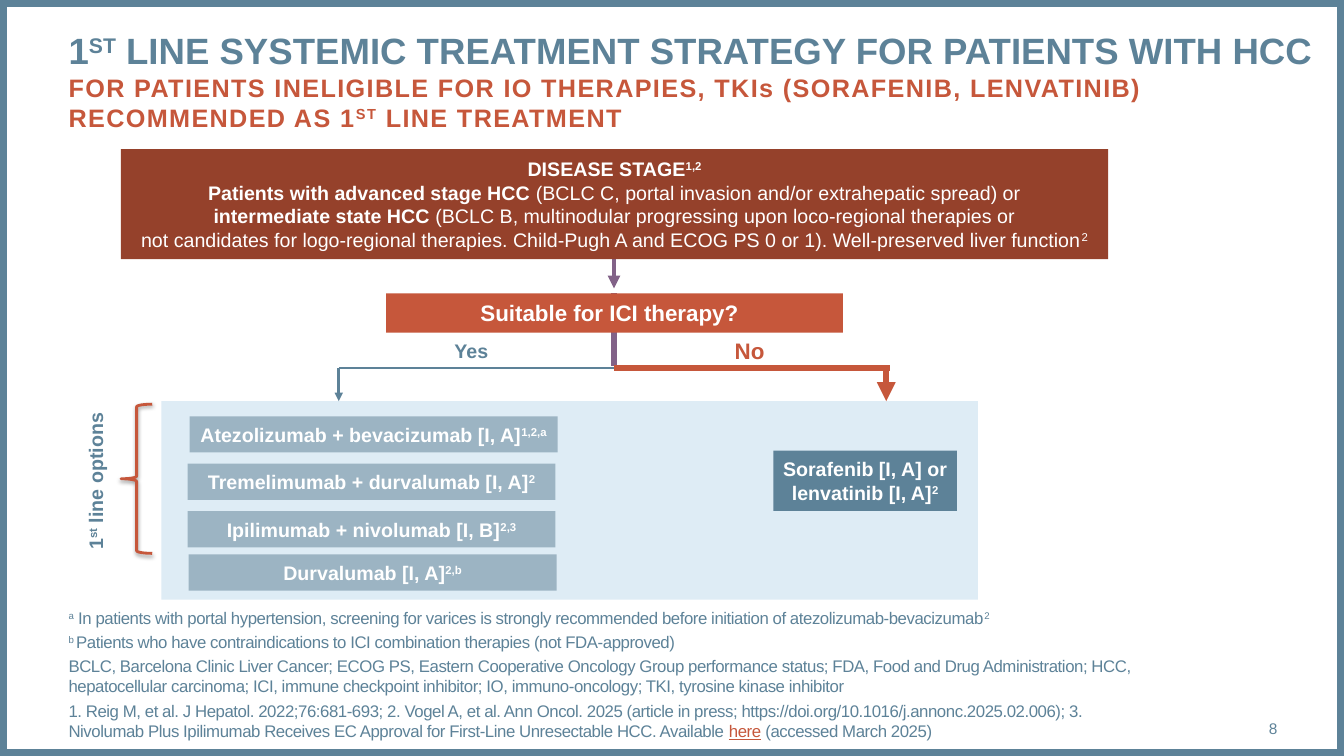
from dataclasses import dataclass

from lxml import etree
from pptx import Presentation
from pptx import util as u
from pptx.dml.color import RGBColor
from pptx.enum import shapes, text
from pptx.oxml.ns import qn

PX = 9144  # EMU per px, 100 px to the inch


@dataclass(frozen=True)
class Theme:
    font: str = "Arial"
    slate: str = "5D8298"
    mist: str = "9CB4C3"
    pale: str = "DEECF5"
    rust: str = "C6573B"
    brick: str = "95412B"
    plum: str = "826288"
    white: str = "FFFFFF"
    title: float = 26.1
    subtitle: float = 18
    question: float = 16
    label: float = 14
    note: float = 12
    number: float = 11


T = Theme()
CENTER, LEFT, RIGHT = text.PP_ALIGN.CENTER, text.PP_ALIGN.LEFT, text.PP_ALIGN.RIGHT


def write(paragraph, words, size, color, bold=True, spacing=0, underline=False):
    """Add runs; words between ^ marks are superscript."""
    for i, part in enumerate(words.split("^")):
        if not part:
            continue
        run = paragraph.add_run()
        run.text = part
        font = run.font
        font.name, font.size, font.bold = T.font, u.Pt(size), bold
        font.color.rgb = RGBColor.from_string(color)
        if underline:
            font.underline = True
        props = run._r.get_or_add_rPr()
        if spacing:
            props.set("spc", str(spacing))
        if i % 2:
            props.set("baseline", "30000")


def box(place, fill=None, sides=0, ends=5, anchor=text.MSO_ANCHOR.MIDDLE, align=CENTER):
    """Add a filled rectangle or a text box; return it with its first paragraph."""
    place = [n * PX for n in place]
    if fill:
        item = slide.shapes.add_shape(shapes.MSO_SHAPE.RECTANGLE, *place)
        item.shadow.inherit = False
        item.fill.solid()
        item.fill.fore_color.rgb = RGBColor.from_string(fill)
        item.line.fill.background()
    else:
        item = slide.shapes.add_textbox(*place)
    frame = item.text_frame
    frame.word_wrap, frame.vertical_anchor = True, anchor
    frame.margin_left = frame.margin_right = sides * PX
    frame.margin_top = frame.margin_bottom = ends * PX
    frame.paragraphs[0].alignment = align
    return item, frame.paragraphs[0]


deck = Presentation()
deck.slide_width, deck.slide_height = 1333 * PX, 750 * PX
slide = deck.slides.add_slide(deck.slide_layouts[5])

# Slide border
border = slide.shapes.add_shape(shapes.MSO_SHAPE.RECTANGLE, 0, 0, deck.slide_width, deck.slide_height)
border.shadow.inherit = False
border.fill.background()
border.line.color.rgb = RGBColor.from_string(T.slate)
border.line.width = u.Pt(10)

# Title
title = slide.shapes.title
title.left, title.top, title.width, title.height = (n * PX for n in (68, 28, 1237, 94))
heading = title.text_frame
heading.auto_size = text.MSO_AUTO_SIZE.NONE
heading.word_wrap, heading.vertical_anchor = True, text.MSO_ANCHOR.TOP
heading.margin_left = heading.margin_right = heading.margin_top = heading.margin_bottom = 0
headline = heading.paragraphs[0]
headline.alignment = LEFT
write(headline, "1^ST^ LINE SYSTEMIC TREATMENT STRATEGY FOR PATIENTS WITH HCC", T.title, T.slate)
headline.add_line_break()
write(headline, "FOR PATIENTS INELIGIBLE FOR IO THERAPIES, TKIs (SORAFENIB, LENVATINIB) "
      "RECOMMENDED AS 1^ST^ LINE TREATMENT", T.subtitle, T.rust, spacing=100)

# Footnotes and references
notes, note = box((68, 695, 1063, 40), ends=0, anchor=text.MSO_ANCHOR.BOTTOM, align=LEFT)
footnotes = (
    "^a^ In patients with portal hypertension, screening for varices is strongly recommended "
    "before initiation of atezolizumab-bevacizumab^2^",
    "^b ^Patients who have contraindications to ICI combination therapies (not FDA-approved)",
    "BCLC, Barcelona Clinic Liver Cancer; ECOG PS, Eastern Cooperative Oncology Group performance "
    "status; FDA, Food and Drug Administration; HCC, hepatocellular carcinoma; ICI, immune "
    "checkpoint inhibitor; IO, immuno-oncology; TKI, tyrosine kinase inhibitor",
    "1. Reig M, et al. J Hepatol. 2022;76:681-693; 2. Vogel A, et al. Ann Oncol. 2025 (article in "
    "press; https://doi.org/10.1016/j.annonc.2025.02.006); 3. Nivolumab Plus Ipilimumab Receives "
    "EC Approval for First-Line Unresectable HCC. Available ",
)
for i, words in enumerate(footnotes):
    if i:
        note = notes.text_frame.add_paragraph()
        note.alignment = LEFT
        note.space_before = u.Pt(3)
    write(note, words, T.note, T.slate, bold=False, spacing=-30)
write(note, "here", T.note, T.rust, bold=False, spacing=-30, underline=True)
write(note, " (accessed March 2025)", T.note, T.slate, bold=False, spacing=-30)

# Options panel
box((160, 398, 810, 197), T.pale)

# Connectors: from, to, colour, weight, arrowhead
for x1, y1, x2, y2, color, weight, arrow in (
    (609, 291, 609, 363, T.plum, 4.5, False),
    (336, 365, 336, 398, T.slate, 2, True),
    (879, 365, 879, 398, T.rust, 4.5, True),
    (336, 365, 609, 365, T.slate, 2, False),
    (609, 207, 609, 286, T.plum, 3, True),
    (609, 365, 883, 365, T.rust, 4.5, False),
):
    link = slide.shapes.add_connector(shapes.MSO_CONNECTOR.STRAIGHT, x1 * PX, y1 * PX, x2 * PX, y2 * PX)
    link.line.color.rgb = RGBColor.from_string(color)
    link.line.width = u.Pt(weight)
    if arrow:
        etree.SubElement(link.line._get_or_add_ln(), qn("a:tailEnd"), type="triangle")
    etree.SubElement(link._element.spPr, qn("a:effectLst"))

# Disease stage
stage, criteria = box((120, 148, 979, 109), T.brick, sides=10)
write(criteria, "DISEASE STAGE^1,2^", T.label, T.white)
criteria = stage.text_frame.add_paragraph()
criteria.alignment = CENTER
write(criteria, "Patients with advanced stage HCC ", T.label, T.white)
write(criteria, "(BCLC C, portal invasion and/or extrahepatic spread) or", T.label, T.white, bold=False)
criteria.add_line_break()
write(criteria, "intermediate state HCC ", T.label, T.white)
write(criteria, "(BCLC B, multinodular progressing upon loco-regional therapies or", T.label, T.white, bold=False)
criteria.add_line_break()
write(criteria, "not candidates for logo-regional therapies. Child-Pugh A and ECOG PS 0 or 1). "
      "Well-preserved liver function^2^", T.label, T.white, bold=False)

# Question and answers
question, ask = box((383, 291, 453, 39), T.rust)
question.text_frame.margin_right = 10 * PX
write(ask, "Suitable for ICI therapy?", T.question, T.white)
for left, answer, size, color in ((444, "Yes", T.label, T.slate), (720, "No", T.question, T.rust)):
    write(box((left, 336, 47, 24))[1], answer, size, color)

# Treatment options
for left, top, width, height, fill, drugs in (
    (188, 413, 365, 36, T.mist, "Atezolizumab + bevacizumab [I, A]^1,2,a^"),
    (186, 460, 365, 36, T.mist, "Tremelimumab + durvalumab [I, A]^2^"),
    (186, 507, 365, 36, T.mist, "Ipilimumab + nivolumab [I, B]^2,3^"),
    (187, 550, 365, 36, T.mist, "Durvalumab [I, A]^2,b^"),
    (767, 447, 182, 60, T.slate, "Sorafenib [I, A] or lenvatinib [I, A]^2^"),
):
    write(box((left, top, width, height), fill)[1], drugs, T.label, T.white)

# Side label and brace
side, options = box((4, 451, 181, 53))
side.rotation = 270
write(options, "1^st^ line options", T.label, T.slate)
brace = slide.shapes.add_shape(shapes.MSO_SHAPE.LEFT_BRACE, 120 * PX, 401 * PX, 31 * PX, 148 * PX)
brace.fill.background()
brace.line.color.rgb = RGBColor.from_string(T.rust)
brace.line.width = u.Pt(2)
effects = etree.SubElement(brace._element.spPr, qn("a:effectLst"))
shade = etree.SubElement(effects, qn("a:outerShdw"), blurRad="40000", dist="20000",
                         dir="5400000", rotWithShape="0")
black = etree.SubElement(shade, qn("a:srgbClr"), val="000000")
etree.SubElement(black, qn("a:alpha"), val="38000")

# Slide number
write(box((1181, 703, 86, 40), ends=0, align=RIGHT)[1], "8", T.number, T.slate, bold=False)

deck.save("out.pptx")
